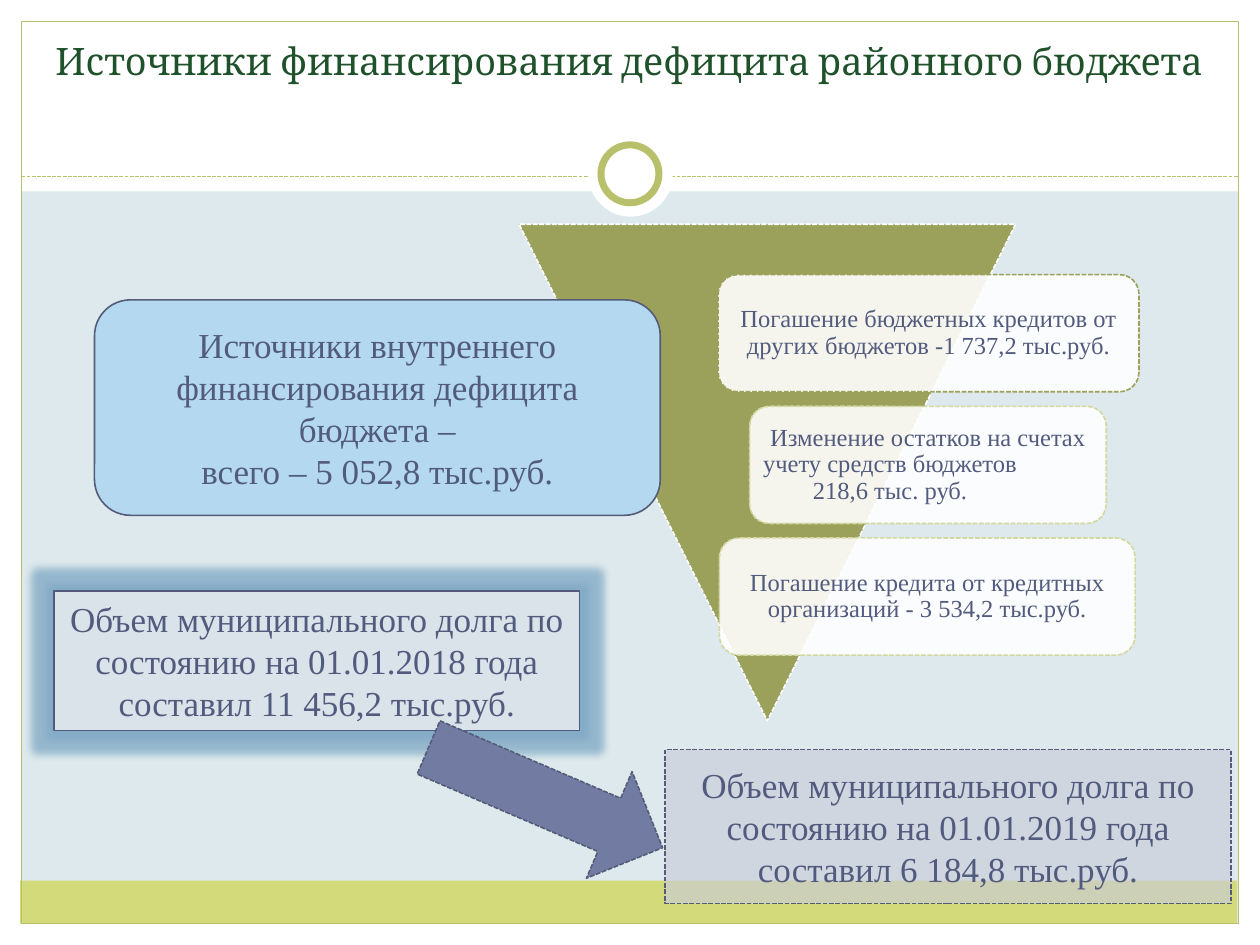
import pptx
import pptx.util
import pptx.dml.color
import pptx.enum.dml
import pptx.enum.shapes
import pptx.enum.text
import pptx.oxml
import pptx.oxml.ns

Inches = pptx.util.Inches
Pt = pptx.util.Pt
SHAPE = pptx.enum.shapes.MSO_SHAPE
ANCHOR = pptx.enum.text.MSO_ANCHOR
DASH = pptx.enum.dml.MSO_LINE.SQUARE_DOT
A_NS = pptx.oxml.ns.nsdecls("a")

BACKGROUND, WHITE = "DDE9EC", "FFFFFF"
GREEN, OLIVE, SLATE, EDGE = "B9C06C", "9BA15A", "525B7E", "545C79"


def rgb(color):
    return pptx.dml.color.RGBColor.from_string(color)


def set_line(line, color, width, dashed):
    line.color.rgb = rgb(color)
    line.width = Pt(width)
    if dashed:
        line.dash_style = DASH


def add_box(slide, kind, at, fill=None, line=None, width=0.9, dashed=False,
            alpha=None, rotation=0):
    s = slide.shapes.add_shape(kind, *(Inches(v) for v in at))
    s.shadow.inherit = False
    s.rotation = rotation
    if fill:
        s.fill.solid()
        s.fill.fore_color.rgb = rgb(fill)
    else:
        s.fill.background()
    if alpha is not None:
        color = s.fill._xPr.find(".//" + pptx.oxml.ns.qn("a:srgbClr"))
        color.append(pptx.oxml.parse_xml(f'<a:alpha {A_NS} val="{alpha * 1000}"/>'))
    if line:
        set_line(s.line, line, width, dashed)
    else:
        s.line.fill.background()
    return s


def add_rule(slide, x1, x2, y):
    c = slide.shapes.add_connector(
        pptx.enum.shapes.MSO_CONNECTOR.STRAIGHT,
        Inches(x1), Inches(y), Inches(x2), Inches(y))
    set_line(c.line, GREEN, 0.75, True)
    c._element.spPr.append(pptx.oxml.parse_xml(f"<a:effectLst {A_NS}/>"))


def add_glow(s, color, radius, alpha):
    effects = s._element.spPr.find(pptx.oxml.ns.qn("a:effectLst"))
    effects.append(pptx.oxml.parse_xml(
        f'<a:glow {A_NS} rad="{Inches(radius)}"><a:srgbClr val="{color}">'
        f'<a:alpha val="{alpha * 1000}"/></a:srgbClr></a:glow>'))


def set_text(s, lines, size, color=SLATE, font="Times New Roman",
             anchor=ANCHOR.MIDDLE, inset=(0.1, 0.05), spacing=1.0):
    tf = s.text_frame
    tf.word_wrap = True
    tf.vertical_anchor = anchor
    tf.margin_left = tf.margin_right = Inches(inset[0])
    tf.margin_top = tf.margin_bottom = Inches(inset[1])
    for i, text in enumerate(lines):
        p = tf.paragraphs[0] if i == 0 else tf.add_paragraph()
        p.alignment = pptx.enum.text.PP_ALIGN.CENTER
        p.line_spacing = spacing
        r = p.add_run()
        r.text = text
        r.font.size = Pt(size)
        r.font.name = font
        r.font.color.rgb = rgb(color)
    return tf


def add_frame(slide):
    # White margins, bottom band, border and the ring on the dashed rule
    for at in ((0, 7.33, 10, 0.17), (0, 0, 10, 1.52),
               (0, 0, 0.17, 7.5), (9.83, 0, 0.17, 7.5)):
        add_box(slide, SHAPE.RECTANGLE, at, WHITE)
    add_box(slide, SHAPE.RECTANGLE, (0.16, 6.99, 9.66, 0.34), "D2DA7A")
    add_box(slide, SHAPE.RECTANGLE, (0.17, 0.17, 9.66, 7.16), line=GREEN, width=0.75)
    add_rule(slide, 0.17, 9.83, 1.4)
    add_box(slide, SHAPE.OVAL, (4.67, 1.05, 0.67, 0.67), WHITE)
    add_box(slide, SHAPE.OVAL, (4.77, 1.15, 0.46, 0.46), WHITE, GREEN, 4)


def add_sources(slide):
    # Inverted triangle with three translucent source cards
    add_box(slide, SHAPE.ISOSCELES_TRIANGLE, (4.12, 1.78, 3.94, 3.94),
            OLIVE, WHITE, dashed=True, rotation=180)
    cards = (
        (5.7, 3.34, OLIVE,
         ["Погашение бюджетных кредитов от других бюджетов -1 737,2 тыс.руб."]),
        (5.95, 2.83, "D2D89F",
         ["Изменение остатков на счетах", "учету средств бюджетов", "218,6 тыс. руб."]),
        (5.71, 3.3, "D2D89F",
         ["Погашение кредита от кредитных организаций - 3 534,2 тыс.руб."]),
    )
    for i, (x, w, line, lines) in enumerate(cards):
        s = add_box(slide, SHAPE.ROUNDED_RECTANGLE, (x, 2.18 + i * 1.045, w, 0.93),
                    WHITE, line, dashed=True, alpha=90)
        tf = set_text(s, lines, 14, inset=(0.02, 0.02), spacing=0.9)
        if len(lines) == 3:
            # The middle line sits left of centre
            tf.paragraphs[1]._p.get_or_add_pPr().set("marR", str(Inches(0.6)))

    s = add_box(slide, SHAPE.ROUNDED_RECTANGLE, (0.75, 2.38, 4.49, 1.71), "B3D8EF", EDGE)
    set_text(s, ["Источники внутреннего финансирования дефицита бюджета –",
                 "всего – 5 052,8 тыс.руб."], 20)


def add_debt(slide):
    # Municipal debt at the start of each year, joined by a block arrow
    debt = "Объем муниципального долга по состоянию на 01.01.{} года составил {} тыс.руб."
    s = add_box(slide, SHAPE.RECTANGLE, (5.28, 5.95, 4.49, 1.22),
                "C7CBDA", EDGE, dashed=True, alpha=63)
    set_text(s, [debt.format(2019, "6 184,8")], 20)
    s = add_box(slide, SHAPE.RECTANGLE, (0.43, 4.69, 4.17, 1.11), "DBE3EA", SLATE, 0.75)
    add_glow(s, "7FA8C4", 0.12, 75)
    set_text(s, [debt.format(2018, "11 456,2")], 20, anchor=ANCHOR.TOP)
    add_box(slide, SHAPE.RIGHT_ARROW, (3.32, 5.87, 2.02, 0.92),
            "727CA3", EDGE, dashed=True, rotation=23.2)


def main():
    prs = pptx.Presentation()
    prs.slide_width, prs.slide_height = Inches(10), Inches(7.5)
    slide = prs.slides.add_slide(prs.slide_layouts[6])
    slide.background.fill.solid()
    slide.background.fill.fore_color.rgb = rgb(BACKGROUND)

    add_frame(slide)
    # Title
    s = slide.shapes.add_textbox(Inches(0.33), Inches(0.25), Inches(9.33), Inches(0.83))
    set_text(s, ["Источники финансирования дефицита районного бюджета"], 21.6,
             "1F512B", "Cambria", ANCHOR.TOP, (0.05, 0.05))
    add_sources(slide)
    add_debt(slide)
    prs.save("out.pptx")


if __name__ == "__main__":
    main()
